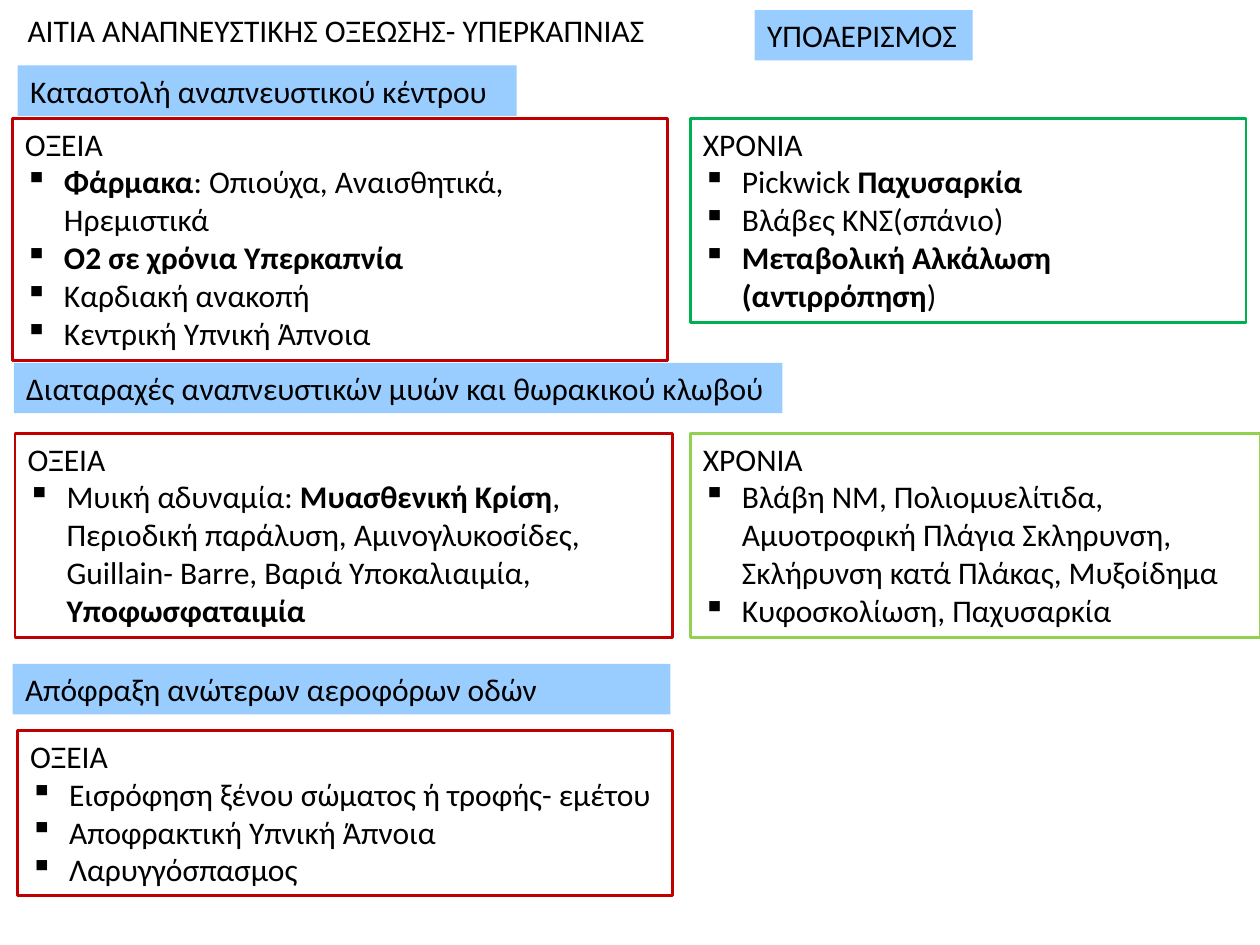
from dataclasses import dataclass

from lxml.etree import SubElement
from pptx import Presentation
from pptx.dml.color import RGBColor
from pptx.enum.shapes import MSO_SHAPE as Shape
from pptx.enum.text import MSO_ANCHOR as Anchor, MSO_AUTO_SIZE as AutoSize, PP_ALIGN as Align
from pptx.oxml.ns import qn
from pptx.util import Inches, Pt


@dataclass(frozen=True)
class Theme:
    font: str = "Calibri"
    size: Pt = Pt(18)
    text: RGBColor = RGBColor(0x00, 0x00, 0x00)
    heading: RGBColor = RGBColor(0x99, 0xCC, 0xFF)
    acute: RGBColor = RGBColor(0xC0, 0x00, 0x00)
    chronic: RGBColor = RGBColor(0x00, 0xB0, 0x50)
    chronic_light: RGBColor = RGBColor(0x92, 0xD0, 0x50)
    border: Pt = Pt(1.5)
    indent: Inches = Inches(0.31)


THEME = Theme()
LABEL_HEIGHT = 0.4


@dataclass(frozen=True)
class Bold:
    text: str


def add_runs(paragraph, parts):
    """Write each part as a run; parts wrapped in Bold are set bold."""
    paragraph.alignment = Align.LEFT
    for part in parts:
        run = paragraph.add_run()
        is_bold = isinstance(part, Bold)
        run.text = part.text if is_bold else part
        run.font.bold = is_bold
        run.font.name = THEME.font
        run.font.size = THEME.size
        run.font.color.rgb = THEME.text


def add_bullet(text_frame, parts):
    paragraph = text_frame.add_paragraph()
    add_runs(paragraph, parts)
    properties = paragraph._p.get_or_add_pPr()
    properties.set("marL", str(THEME.indent))
    properties.set("indent", str(-THEME.indent))
    SubElement(properties, qn("a:buChar")).set("char", "▪")


def prepare_text(shape, first_line):
    text_frame = shape.text_frame
    text_frame.word_wrap = True
    text_frame.auto_size = AutoSize.SHAPE_TO_FIT_TEXT
    text_frame.vertical_anchor = Anchor.TOP
    add_runs(text_frame.paragraphs[0], [first_line])
    return text_frame


def add_rectangle(slide, left, top, width, height):
    shape = slide.shapes.add_shape(
        Shape.RECTANGLE, Inches(left), Inches(top), Inches(width), Inches(height))
    shape.shadow.inherit = False
    return shape


def add_title(slide, text, left, top, width):
    box = slide.shapes.add_textbox(
        Inches(left), Inches(top), Inches(width), Inches(LABEL_HEIGHT))
    prepare_text(box, text)


def add_heading(slide, text, left, top, width):
    shape = add_rectangle(slide, left, top, width, LABEL_HEIGHT)
    shape.fill.solid()
    shape.fill.fore_color.rgb = THEME.heading
    shape.line.fill.background()
    prepare_text(shape, text)


def add_cause_box(slide, title, color, place, bullets):
    shape = add_rectangle(slide, *place)
    shape.fill.background()
    shape.line.color.rgb = color
    shape.line.width = THEME.border
    text_frame = prepare_text(shape, title)
    for parts in bullets:
        add_bullet(text_frame, parts)


def main():
    presentation = Presentation()
    presentation.slide_width = Inches(10)
    presentation.slide_height = Inches(7.5)
    slide = presentation.slides.add_slide(presentation.slide_layouts[6])

    add_title(slide, "ΑΙΤΙΑ ΑΝΑΠΝΕΥΣΤΙΚΗΣ ΟΞΕΩΣΗΣ- ΥΠΕΡΚΑΠΝΙΑΣ", 0.12, 0.04, 5.91)

    add_heading(slide, "Καταστολή αναπνευστικού κέντρου", 0.14, 0.52, 3.96)
    add_cause_box(slide, "ΟΞΕΙΑ", THEME.acute, (0.1, 0.94, 5.2, 1.92), [
        [Bold("Φάρμακα"), ": Οπιούχα, Αναισθητικά, Ηρεμιστικά"],
        [Bold("Ο2 σε χρόνια Υπερκαπνία")],
        ["Καρδιακή ανακοπή"],
        ["Κεντρική Υπνική Άπνοια"],
    ])
    add_cause_box(slide, "ΧΡΟΝΙΑ", THEME.chronic, (5.48, 0.94, 4.41, 1.62), [
        ["Pickwick ", Bold("Παχυσαρκία")],
        ["Βλάβες ΚΝΣ(σπάνιο)"],
        [Bold("Μεταβολική Αλκάλωση (αντιρρόπηση"), ")"],
    ])

    add_heading(slide, "Διαταραχές αναπνευστικών μυών και θωρακικού κλωβού", 0.11, 2.88, 6.1)
    add_cause_box(slide, "ΟΞΕΙΑ", THEME.acute, (0.12, 3.44, 5.22, 1.62), [
        ["Μυική αδυναμία: ", Bold("Μυασθενική Κρίση"),
         ", Περιοδική παράλυση, Αμινογλυκοσίδες, Guillain- Barre, Βαριά Υποκαλιαιμία, ",
         Bold("Υποφωσφαταιμία")],
    ])
    add_cause_box(slide, "XΡONIA", THEME.chronic_light, (5.48, 3.44, 4.52, 1.62), [
        ["Βλάβη ΝΜ, Πολιομυελίτιδα, Αμυοτροφική Πλάγια Σκληρυνση, "
         "Σκλήρυνση κατά Πλάκας, Μυξοίδημα"],
        ["Κυφοσκολίωση, Παχυσαρκία"],
    ])

    add_heading(slide, "Απόφραξη ανώτερων αεροφόρων οδών", 0.1, 5.27, 5.22)
    add_cause_box(slide, "ΟΞΕΙΑ", THEME.acute, (0.14, 5.8, 5.2, 1.31), [
        ["Εισρόφηση ξένου σώματος ή τροφής- εμέτου"],
        ["Αποφρακτική Υπνική Άπνοια"],
        ["Λαρυγγόσπασμος"],
    ])

    add_heading(slide, "ΥΠΟΑΕΡΙΣΜΟΣ", 5.99, 0.08, 1.73)
    presentation.save("out.pptx")


if __name__ == "__main__":
    main()
